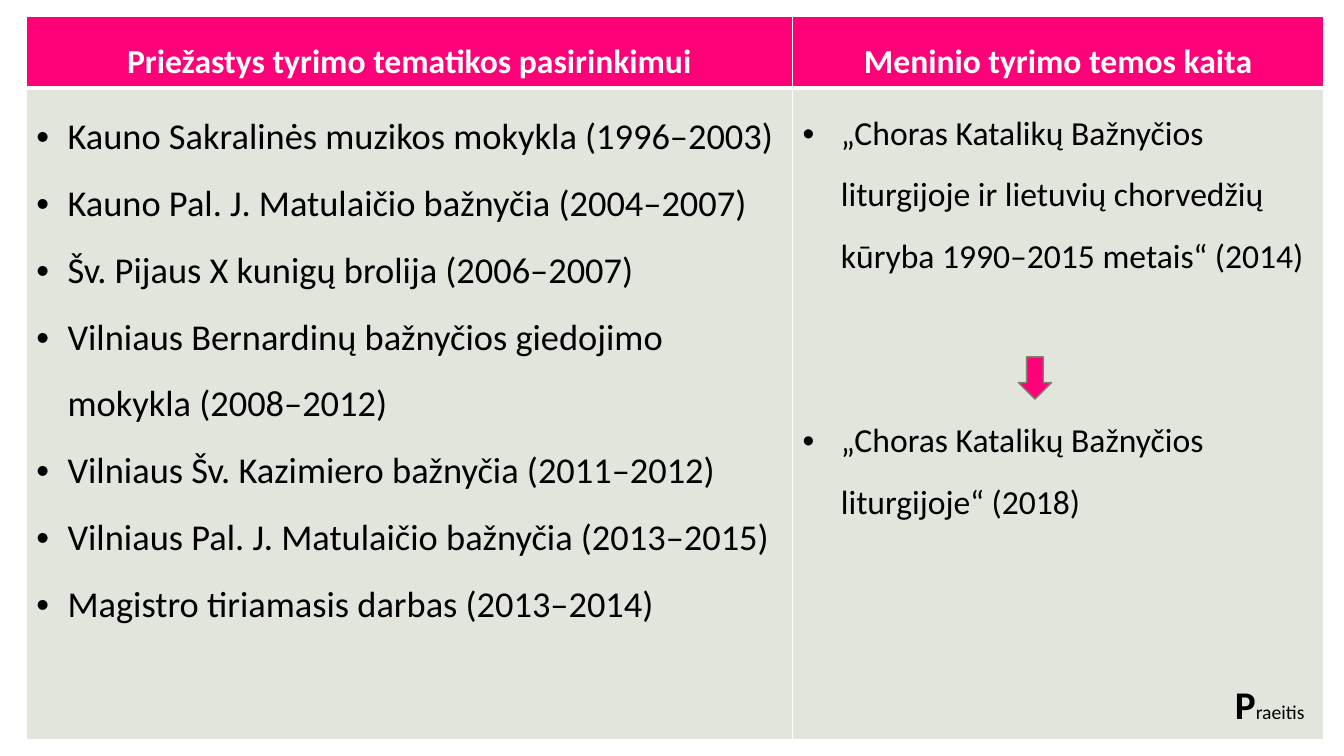
from lxml import etree
from pptx import Presentation
from pptx.dml.color import RGBColor
from pptx.enum.shapes import MSO_SHAPE
from pptx.enum.text import MSO_ANCHOR, MSO_AUTO_SIZE, PP_ALIGN
from pptx.oxml.ns import qn
from pptx.util import Inches, Pt

DOWN_ARROW = MSO_SHAPE.DOWN_ARROW
MIDDLE, TOP = MSO_ANCHOR.MIDDLE, MSO_ANCHOR.TOP
CENTER, LEFT = PP_ALIGN.CENTER, PP_ALIGN.LEFT
FIT_SHAPE = MSO_AUTO_SIZE.SHAPE_TO_FIT_TEXT

# Each column: width, heading, bulleted items and their format (gap in points)
COLUMNS = [
    (7.6, "Priežastys tyrimo tematikos pasirinkimui", [
        "Kauno Sakralinės muzikos mokykla (1996–2003)",
        "Kauno Pal. J. Matulaičio bažnyčia (2004–2007)",
        "Šv. Pijaus X kunigų brolija (2006–2007)",
        "Vilniaus Bernardinų bažnyčios giedojimo mokykla (2008–2012)",
        "Vilniaus Šv. Kazimiero bažnyčia (2011–2012)",
        "Vilniaus Pal. J. Matulaičio bažnyčia (2013–2015)",
        "Magistro tiriamasis darbas (2013–2014)",
    ], {"size": 26, "indent": 0.31}),
    (5.27, "Meninio tyrimo temos kaita", [
        "„Choras Katalikų Bažnyčios liturgijoje ir lietuvių chorvedžių kūryba 1990–2015 metais“ (2014)",
        "„Choras Katalikų Bažnyčios liturgijoje“ (2018)",
    ], {"size": 24, "indent": 0.38, "gap": 88}),
]
ROW_HEIGHTS = [0.61, 6.47]


def color(value):
    return RGBColor.from_string(value)


def add_text(paragraph, text, size, font, ink, bold=False):
    run = paragraph.add_run()
    run.text = text
    run.font.name = font
    run.font.size = Pt(size)
    run.font.bold = bold
    run.font.color.rgb = color(ink)


def add_bullet(paragraph, indent):
    properties = paragraph._p.get_or_add_pPr()
    properties.set("marL", str(Inches(indent)))
    properties.set("indent", str(-Inches(indent)))
    etree.SubElement(properties, qn("a:buFont")).set("typeface", "Arial")
    etree.SubElement(properties, qn("a:buChar")).set("char", "•")


def add_borders(cell, ink, bottom):
    properties = cell._tc.get_or_add_tcPr()
    widths = {"a:lnL": 1, "a:lnR": 1, "a:lnT": 1, "a:lnB": bottom}
    # Borders must come before the fill in the cell properties
    for position, (tag, width) in enumerate(widths.items()):
        line = etree.Element(qn(tag))
        line.set("w", str(Pt(width)))
        fill = etree.SubElement(line, qn("a:solidFill"))
        etree.SubElement(fill, qn("a:srgbClr")).set("val", ink)
        properties.insert(position, line)


class SlideBuilder:
    FONT = "Calibri"
    ACCENT, PANEL, OUTLINE = "FF0078", "E1E5DC", "7A866C"
    LIGHT, DARK = "FFFFFF", "000000"
    LINE_SPACING = 1.5

    def __init__(self, presentation):
        self.slide = presentation.slides.add_slide(presentation.slide_layouts[6])

    def table(self, left, top, widths, heights):
        table = self.slide.shapes.add_table(
            len(heights), len(widths), Inches(left), Inches(top),
            Inches(sum(widths)), Inches(sum(heights))).table
        table.horz_banding = False
        for column, width in zip(table.columns, widths):
            column.width = Inches(width)
        for row, height in zip(table.rows, heights):
            row.height = Inches(height)
        return table

    def cell(self, cell, fill, anchor, bottom):
        cell.fill.solid()
        cell.fill.fore_color.rgb = color(fill)
        cell.vertical_anchor = anchor
        add_borders(cell, self.LIGHT, bottom)

    def paragraph(self, paragraph, text, align, size, ink, bold=False):
        paragraph.alignment = align
        paragraph.line_spacing = self.LINE_SPACING
        add_text(paragraph, text, size=size, font=self.FONT, ink=ink, bold=bold)

    def heading_cell(self, cell, heading):
        self.cell(cell, self.ACCENT, MIDDLE, bottom=3)
        self.paragraph(cell.text_frame.paragraphs[0], heading, CENTER,
                       size=24, ink=self.LIGHT, bold=True)

    def list_cell(self, cell, items, size, indent, gap=0):
        self.cell(cell, self.PANEL, TOP, bottom=1)
        frame = cell.text_frame
        for index, item in enumerate(items):
            paragraph = frame.add_paragraph() if index else frame.paragraphs[0]
            if index and gap:
                paragraph.space_before = Pt(gap)
            self.paragraph(paragraph, item, LEFT, size=size, ink=self.DARK)
            add_bullet(paragraph, indent)

    def label(self, left, top, width, height, initial, rest):
        box = self.slide.shapes.add_textbox(
            Inches(left), Inches(top), Inches(width), Inches(height))
        box.text_frame.word_wrap = True
        box.text_frame.auto_size = FIT_SHAPE
        paragraph = box.text_frame.paragraphs[0]
        for text, size, bold in [(initial, 28, True), (rest, 14, False)]:
            add_text(paragraph, text, size=size, font=self.FONT,
                     ink=self.DARK, bold=bold)

    def arrow(self, left, top, width, height):
        shape = self.slide.shapes.add_shape(
            DOWN_ARROW, Inches(left), Inches(top), Inches(width), Inches(height))
        shape.shadow.inherit = False
        shape.fill.solid()
        shape.fill.fore_color.rgb = color(self.ACCENT)
        shape.line.color.rgb = color(self.OUTLINE)
        shape.line.width = Pt(1)


def main():
    presentation = Presentation()
    presentation.slide_width = Inches(13.33)
    presentation.slide_height = Inches(7.5)
    builder = SlideBuilder(presentation)

    # Table: a heading above a bulleted list in each column
    widths = [width for width, *_ in COLUMNS]
    table = builder.table(0.26, 0.16, widths, ROW_HEIGHTS)
    for column, (_, heading, items, list_format) in enumerate(COLUMNS):
        builder.heading_cell(table.cell(0, column), heading)
        builder.list_cell(table.cell(1, column), items, **list_format)

    # Section label in the corner
    builder.label(12.15, 6.7, 1.44, 0.57, "P", "raeitis")

    # Arrow from the first topic to the second
    builder.arrow(10.1, 3.54, 0.33, 0.42)

    presentation.save("out.pptx")


if __name__ == "__main__":
    main()
